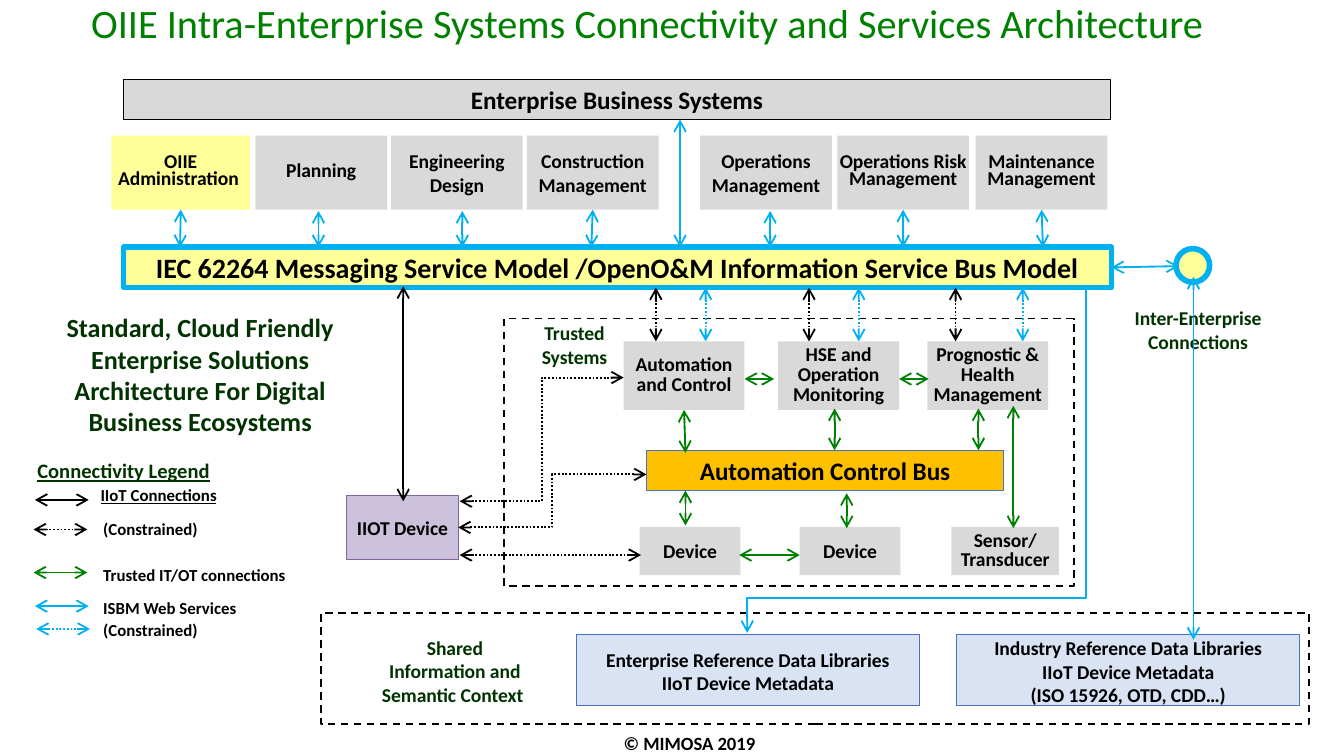
from pptx import Presentation
from pptx.dml.color import RGBColor
from pptx.enum.dml import MSO_LINE_DASH_STYLE as Dash
from pptx.enum.shapes import MSO_CONNECTOR as Link, MSO_SHAPE as Shape
from pptx.enum.text import MSO_ANCHOR as Anchor, PP_ALIGN as Align
from pptx.oxml.ns import qn
from pptx.util import Inches, Pt
from lxml.etree import SubElement

COLORS = {
    "black": "000000", "white": "FFFFFF", "gray": "D9D9D9", "yellow": "FFFF99",
    "sky": "00B0F0", "green": "008000", "forest": "003300", "amber": "FFC000",
    "blue": "4472C4", "pale": "DAE3F3", "lilac": "CCC1DA", "purple": "8064A2",
}

# Rows of the diagram: (top, height)
ROWS = {
    "business": (0.59, 0.3), "apps": (1.01, 0.55), "bus": (1.84, 0.3),
    "systems": (2.54, 0.51), "control": (3.35, 0.3), "iiot": (3.69, 0.47),
    "devices": (3.92, 0.36), "libraries": (4.72, 0.53),
    "trusted": (2.37, 1.99), "context": (4.56, 0.83),
}

# Box styles: fill, (line colour, width, dash), text size, tight side margins
STYLES = {
    "frame": ("white", ("black", 1, Dash.DASH), 10.5, False),
    "business": ("gray", ("black", 0.5, None), 13.5, False),
    "bus": ("yellow", ("sky", 3, None), 15, False),
    "control": ("amber", ("blue", 0.5, None), 13.5, False),
    "gray": ("gray", None, 10.5, True),
    "admin": ("yellow", None, 10.5, True),
    "iiot": ("lilac", ("purple", 0.5, None), 10.5, True),
    "library": ("pale", ("blue", 0.5, None), 10.5, False),
}

# Boxes: row, left, width, style, line spacing in points, paragraphs
BOXES = [
    ("context", 2.39, 7.35, "frame", None, []),
    ("trusted", 3.75, 4.24, "frame", None, []),
    ("business", 0.92, 7.34, "business", None, ["Enterprise Business Systems"]),
    ("apps", 0.83, 1.03, "admin", 9, ["OIIE Administration "]),
    ("apps", 1.9, 0.98, "gray", 9, ["Planning"]),
    ("apps", 2.91, 0.98, "gray", None, ["Engineering Design"]),
    ("apps", 3.92, 0.98, "gray", None, ["Construction Management"]),
    ("apps", 5.21, 0.98, "gray", None, ["Operations Management"]),
    ("apps", 6.23, 0.98, "gray", 9, ["Operations Risk Management"]),
    ("apps", 7.26, 0.98, "gray", 9, ["Maintenance Management"]),
    ("bus", 0.92, 7.35, "bus", None,
     ["IEC 62264 Messaging Service Model /OpenO&M Information Service Bus Model"]),
    ("systems", 4.64, 0.9, "gray", 10.5, ["Automation and Control"]),
    ("systems", 5.79, 0.9, "gray", 10.5, ["HSE and Operation Monitoring"]),
    ("systems", 6.9, 0.9, "gray", 10.5, ["Prognostic & Health Management"]),
    ("control", 4.81, 2.66, "control", None, ["Automation Control Bus"]),
    ("iiot", 2.58, 0.83, "iiot", None, ["IIOT Device"]),
    ("devices", 4.76, 0.75, "gray", None, ["Device"]),
    ("devices", 5.95, 0.75, "gray", None, ["Device"]),
    ("devices", 7.08, 0.8, "gray", 10.5, ["Sensor/ Transducer"]),
    ("libraries", 4.29, 2.55, "library", None,
     ["Enterprise Reference Data Libraries", "IIoT Device Metadata"]),
    ("libraries", 7.12, 2.55, "library", None,
     ["Industry Reference Data Libraries", "IIoT Device Metadata",
      "(ISO 15926, OTD, CDD…)"]),
]

# Labels: left, top, width, height, paragraphs, format
HEADING = {"color": "forest", "align": Align.CENTER}
LABELS = [
    (0.58, -0.02, 8.83, 0.59,
     ["OIIE Intra-Enterprise Systems Connectivity and Services Architecture"],
     {"size": 21.6, "color": "green", "bold": False, "spacing": 0.9}),
    (4.17, 5.4, 1.92, 0.27, ["© MIMOSA 2019"], {"size": 10, "align": Align.CENTER}),
    (3.92, 2.34, 0.71, 0.45, ["Trusted", "Systems"], {**HEADING, "wrap": False}),
    (0.17, 2.27, 2.64, 1.04,
     ["Standard, Cloud Friendly Enterprise Solutions Architecture For Digital "
      "Business Ecosystems"], {**HEADING, "size": 14}),
    (2.72, 4.68, 1.33, 0.63, ["Shared Information and Semantic Context "], HEADING),
    (8.25, 2.23, 1.33, 0.45, ["Inter-Enterprise Connections"], HEADING),
    (0.17, 3.36, 1.5, 0.29, ["Connectivity Legend"],
     {**HEADING, "size": 11, "underline": True}),
]

# Legend: arrow left and height, label left, top and width, text, colour, dotted, underlined
LEGEND = [
    (0.26, 3.72, 0.65, 3.56, 1.17, "IIoT Connections", "black", False, True),
    (0.25, 3.94, 0.67, 3.81, 1.04, "(Constrained)", "black", True, False),
    (0.25, 4.26, 0.67, 4.15, 1.6, "Trusted IT/OT connections", "green", False, False),
    (0.26, 4.51, 0.67, 4.4, 1.33, "ISBM Web Services", "sky", False, False),
    (0.27, 4.68, 0.67, 4.56, 1.33, "(Constrained)", "sky", True, False),
]
LEGEND_ARROW = 0.4

# Vertical arrows: columns, top, bottom, colour, dotted
VERTICALS = [
    ([1.34, 2.37, 3.44, 4.4, 5.73, 6.72, 7.76], 1.57, 1.84, "sky", False),
    ([5.06], 0.89, 1.84, "sky", False),
    ([4.88, 6.02, 7.11], 2.14, 2.54, "black", True),
    ([5.25, 6.39, 7.61], 2.14, 2.54, "sky", True),
    ([5.1], 3.06, 3.37, "green", False),
    ([6.21, 7.28], 3.04, 3.35, "green", False),
    ([5.1], 3.65, 3.91, "green", False),
    ([6.3], 3.67, 3.93, "green", False),
    ([7.54], 3.02, 3.93, "green", False),
    ([3], 2.13, 3.73, "black", False),
    ([8.88], 2.06, 4.76, "sky", False),
]

# Horizontal arrows: left, right, height, colour, dotted
HORIZONTALS = [
    (5.54, 5.76, 2.82, "green", False),
    (6.69, 6.91, 2.82, "green", False),
    (5.5, 5.95, 4.13, "green", False),
    (3.42, 4.77, 4.13, "black", True),
    (8.27, 8.77, 1.98, "sky", False),
]

# Elbow arrows from the IIOT device: start, end
ELBOWS = [((3.42, 3.93), (4.81, 3.53)), ((3.42, 3.73), (4.64, 2.81))]

prs = Presentation()
prs.slide_width = Inches(10)
prs.slide_height = prs.slide_width * 9 // 16
slide = prs.slides.add_slide(prs.slide_layouts[6])
sides = []  # (shape, site, x, y) for the middle of each box side


def rgb(name):
    return RGBColor.from_string(COLORS[name])


def write(frame, paragraphs, size=10.5, color="black", bold=True, underline=None,
          align=Align.LEFT, spacing=None, wrap=True):
    frame.word_wrap = wrap
    for i, words in enumerate(paragraphs):
        para = frame.paragraphs[0] if i == 0 else frame.add_paragraph()
        para.alignment = align
        if spacing:
            para.line_spacing = spacing
        run = para.add_run()
        run.text = words
        font = {"name": "Calibri", "size": Pt(size), "bold": bold, "underline": underline}
        for key, value in font.items():
            setattr(run.font, key, value)
        run.font.color.rgb = rgb(color)


def label(left, top, width, height, paragraphs, style):
    area = slide.shapes.add_textbox(*map(Inches, (left, top, width, height)))
    write(area.text_frame, paragraphs, **style)


def box(kind, left, top, width, height, fill, outline):
    shape = slide.shapes.add_shape(kind, *map(Inches, (left, top, width, height)))
    shape.shadow.inherit = False
    shape.fill.solid()
    shape.fill.fore_color.rgb = rgb(fill)
    if outline:
        color, weight, dash = outline
        shape.line.color.rgb = rgb(color)
        shape.line.width = Pt(weight)
        shape.line.dash_style = dash
    else:
        shape.line.fill.background()
    return shape


def arrow(start, end, color, dotted=False, kind=Link.STRAIGHT, heads=("headEnd", "tailEnd")):
    link = slide.shapes.add_connector(kind, *map(Inches, (*start, *end)))
    link.line.color.rgb = rgb(color)
    link.line.width = Pt(1)
    if dotted:
        link.line.dash_style = Dash.ROUND_DOT
    for tag in heads:
        SubElement(link.line._get_or_add_ln(), qn("a:" + tag), type="arrow")
    SubElement(link._element.spPr, qn("a:effectLst"))
    for (x, y), join in ((start, link.begin_connect), (end, link.end_connect)):
        for shape, site, side_x, side_y in sides:
            if max(abs(x - side_x), abs(y - side_y)) < 0.012:
                join(shape, site)
    return link


# Boxes
for row, left, width, style, spacing, paragraphs in BOXES:
    top, height = ROWS[row]
    fill, outline, size, tight = STYLES[style]
    part = box(Shape.RECTANGLE, left, top, width, height, fill, outline)
    frame = part.text_frame
    frame.vertical_anchor = Anchor.MIDDLE
    if tight:
        frame.margin_left = frame.margin_right = 0
    if style == "library":
        frame.margin_top = Inches(0.07)
    write(frame, paragraphs, size, align=Align.CENTER, spacing=spacing and Pt(spacing))
    mid_x, mid_y = left + width / 2, top + height / 2
    sides += [(part, 0, mid_x, top), (part, 1, left, mid_y),
              (part, 2, mid_x, top + height), (part, 3, left + width, mid_y)]
box(Shape.OVAL, 8.75, 1.85, 0.25, 0.25, "yellow", ("sky", 3, None))

# Labels and legend
for entry in LABELS:
    label(*entry)
for x, y, left, top, width, words, color, dotted, underline in LEGEND:
    label(left, top, width, 0.25, [words], {"size": 9, "underline": underline or None})
    arrow((x, y), (x + LEGEND_ARROW, y), color, dotted)

# Arrows
for columns, top, bottom, color, dotted in VERTICALS:
    for x in columns:
        arrow((x, top), (x, bottom), color, dotted)
for left, right, y, color, dotted in HORIZONTALS:
    arrow((left, y), (right, y), color, dotted)
for start, end in ELBOWS:
    arrow(start, end, "black", True, Link.ELBOW)

# Elbow from the service bus down to the enterprise libraries, a quarter turn
feed = arrow((5.54, 2.17), (8.1, 4.69), "sky", kind=Link.ELBOW, heads=("tailEnd",))
feed._element.spPr.find(qn("a:xfrm")).set("rot", "5400000")
guides = feed._element.spPr.find(qn("a:prstGeom")).find(qn("a:avLst"))
SubElement(guides, qn("a:gd"), name="adj1", fmla="val 89800")

prs.save("out.pptx")
